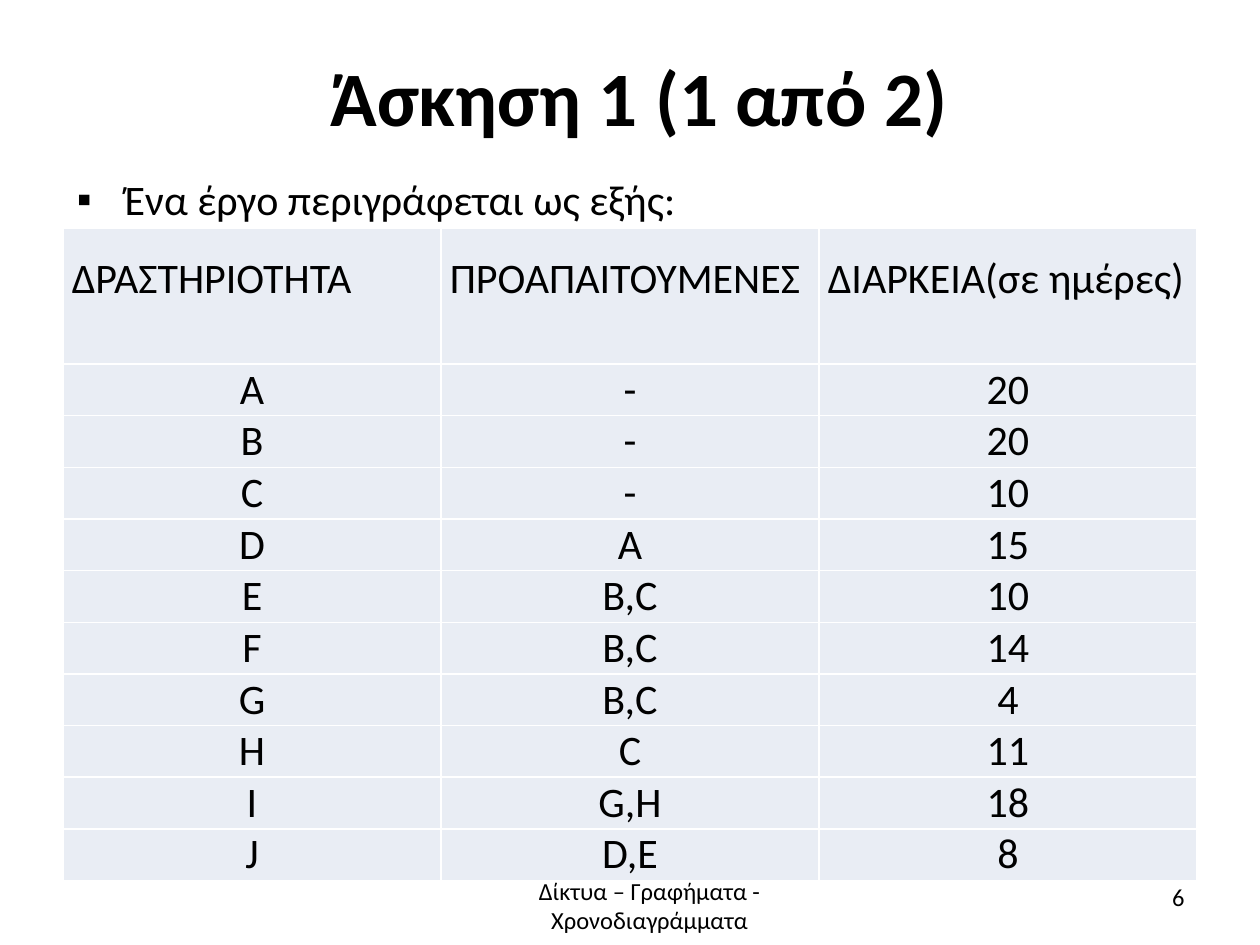
from lxml import etree
from pptx import Presentation
from pptx.dml.color import RGBColor
from pptx.enum.text import MSO_ANCHOR, MSO_AUTO_SIZE, PP_ALIGN
from pptx.oxml.ns import qn
from pptx.util import Inches, Pt

LEFT, MID, RIGHT, FULL = PP_ALIGN.LEFT, PP_ALIGN.CENTER, PP_ALIGN.RIGHT, PP_ALIGN.JUSTIFY
TOP, CENTER = MSO_ANCHOR.TOP, MSO_ANCHOR.MIDDLE
NO_FIT = MSO_AUTO_SIZE.NONE
COLORS = {"text": "000000", "cell": "E9EDF4", "edge": "FFFFFF"}
HEADS = ["ΔΡΑΣΤΗΡΙΟΤΗΤΑ", "ΠΡΟΑΠΑΙΤΟΥΜΕΝΕΣ", "ΔΙΑΡΚΕΙΑ(σε ημέρες)"]
TASKS = [
    ("A", "-", 20), ("B", "-", 20), ("C", "-", 10), ("D", "A", 15),
    ("E", "B,C", 10), ("F", "B,C", 14), ("G", "B,C", 4),
    ("H", "C", 11), ("I", "G,H", 18), ("J", "D,E", 8),
]


def apply(item, values):
    for key, value in values.items():
        setattr(item, key, value)


def write(para, text, size, align, bold=False, **extra):
    para.text = text
    apply(para, {"alignment": align, "space_before": Pt(0), **extra})
    apply(para.font, {"name": "Calibri", "size": Pt(size), "bold": bold})
    para.font.color.rgb = RGBColor.from_string(COLORS["text"])


def place(shape, left, top, width, height, anchor=TOP):
    apply(shape, {"left": Inches(left), "top": Inches(top),
                  "width": Inches(width), "height": Inches(height)})
    apply(shape.text_frame, {"word_wrap": True, "auto_size": NO_FIT,
                             "vertical_anchor": anchor})
    return shape.text_frame


def add_list(holder, text):
    frame = place(holder, 0.51, 1.33, 8.99, 0.45)
    frame.margin_bottom = 0
    para = frame.paragraphs[0]
    props = para._p.get_or_add_pPr()
    props.set("marL", str(Inches(0.38)))
    props.set("indent", str(-Inches(0.38)))
    etree.SubElement(props, qn("a:buChar")).set("char", "▪")
    write(para, text, 24, LEFT)


def add_note(slide, text, align, *box):
    note = slide.shapes.add_textbox(0, 0, 0, 0)
    write(place(note, *box).paragraphs[0], text, 14, align)


def set_edges(cell):
    props = cell._tc.get_or_add_tcPr()
    for place_no, side in enumerate(("lnL", "lnR", "lnT", "lnB")):
        line = etree.Element(qn("a:" + side), w=str(Pt(1)))
        fill = etree.SubElement(line, qn("a:solidFill"))
        etree.SubElement(fill, qn("a:srgbClr"), val=COLORS["edge"])
        props.insert(place_no, line)


def fill_cell(cell, text, head):
    apply(cell, {"margin_left": Inches(0.07), "margin_right": Inches(0.07),
                 "margin_top": 0, "margin_bottom": 0,
                 "vertical_anchor": TOP if head else CENTER})
    cell.fill.solid()
    cell.fill.fore_color.rgb = RGBColor.from_string(COLORS["cell"])
    set_edges(cell)
    extra = {"line_spacing": 1.5} if head else {}
    write(cell.text_frame.paragraphs[0], str(text), 24, FULL if head else MID, **extra)


def add_tasks(slide):
    rows = [HEADS, *TASKS]
    frame = slide.shapes.add_table(len(rows), len(HEADS), Inches(0.5), Inches(1.81),
                                   Inches(9), Inches(5.14))
    table = frame.table
    for r, row in enumerate(rows):
        table.rows[r].height = Inches(0.41 if r else 1.08)
        for c, text in enumerate(row):
            fill_cell(table.cell(r, c), text, r == 0)


def main():
    deck = Presentation()
    apply(deck, {"slide_width": Inches(10), "slide_height": Inches(7.5)})
    slide = deck.slides.add_slide(deck.slide_layouts[1])
    title = place(slide.shapes.title, 0.51, 0.05, 9.13, 1.42, CENTER)
    write(title.paragraphs[0], "Άσκηση 1 (1 από 2)", 44, MID, bold=True)
    add_list(slide.placeholders[1], "Ένα έργο περιγράφεται ως εξής:")
    add_tasks(slide)
    add_note(slide, "Δίκτυα – Γραφήματα - Χρονοδιαγράμματα", MID, 3.41, 6.9, 3.49, 0.55)
    add_note(slide, "6", RIGHT, 7.17, 6.95, 2.33, 0.4)
    deck.save("out.pptx")


if __name__ == "__main__":
    main()
